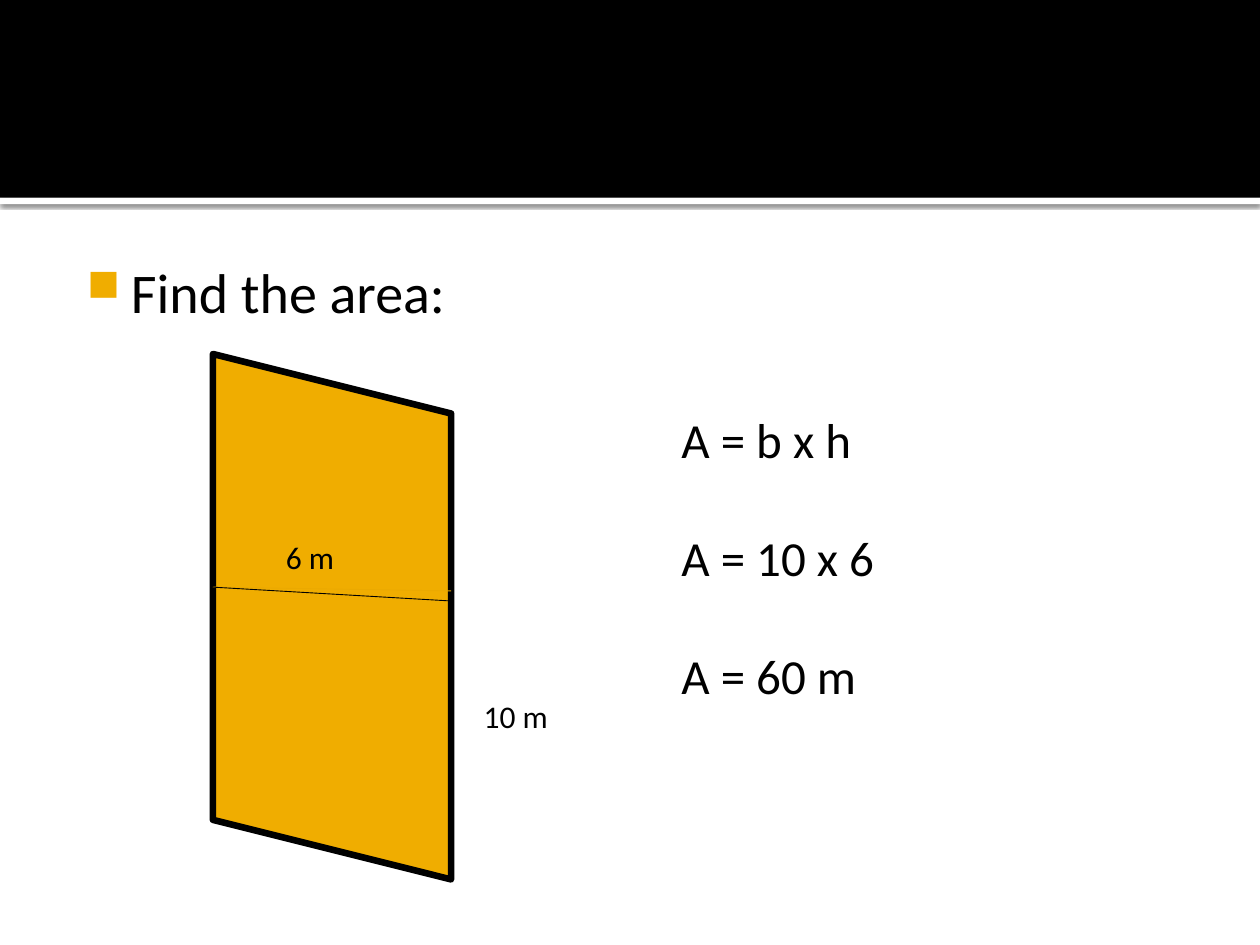
"""Build a slide that works out the area of a parallelogram."""
import lxml.etree
import pptx
import pptx.dml.color
import pptx.enum.shapes
import pptx.oxml.ns
import pptx.util
from dataclasses import dataclass

Inches = pptx.util.Inches
Pt = pptx.util.Pt
SHAPES = pptx.enum.shapes.MSO_SHAPE


@dataclass(frozen=True)
class Theme:
    font: str = "Calibri"
    ink: str = "000000"
    paper: str = "FFFFFF"
    gold: str = "F0AD00"
    dark_gold: str = "EBA900"
    heading: int = 32
    working: int = 28
    label: int = 18
    outline: float = 3.78
    hairline: float = 0.5


THEME = Theme()
SIZE = (10, 7.5)
BANDS = [((0, 1.57, 10, 0.05), THEME.paper), ((0, 0, 10, 1.57), THEME.ink)]
PARALLELOGRAM = (0.55, 3.95, 4.17, 1.89)
HEIGHT_START = (1.69, 4.66)
HEIGHT_ENDS = [((3.58, 4.69), THEME.dark_gold), ((3.58, 4.77), THEME.ink)]
HEADING = ("Find the area:", (0.5, 1.94, 9, 5.06))
LABELS = [("6 m", (2.17, 4.22, 1.1, 0.4)), ("10 m", (3.74, 5.48, 1.02, 0.4))]
WORKING = ("A = b x h\nA = 10 x 6\nA = 60 m", (5.31, 3.2, 3.62, 3.4))


def rgb(value):
    return pptx.dml.color.RGBColor.from_string(value)


def add_node(parent, tag, **attributes):
    node = lxml.etree.SubElement(parent, pptx.oxml.ns.qn(tag))
    for name, value in attributes.items():
        node.set(name, str(value))
    return node


def add_filled(page, kind, place, fill, outline=None):
    shape = page.shapes.add_shape(kind, *map(Inches, place))
    shape.shadow.inherit = False
    shape.fill.solid()
    shape.fill.fore_color.rgb = rgb(fill)
    if outline:
        shape.line.color.rgb = rgb(outline)
        shape.line.width = Pt(THEME.outline)
    else:
        shape.line.fill.background()
    return shape


def add_soft_shadow(shape):
    effects = shape._element.spPr.find(pptx.oxml.ns.qn("a:effectLst"))
    shadow = add_node(effects, "a:outerShdw", blurRad=Pt(2.5), dist=Pt(0.8),
                      dir=90 * 60000, algn="tl", rotWithShape=0)
    color = add_node(shadow, "a:srgbClr", val=THEME.ink)
    add_node(color, "a:alpha", val=60000)


def add_line(page, start, end, color):
    line = page.shapes.add_connector(pptx.enum.shapes.MSO_CONNECTOR.STRAIGHT,
                                     *map(Inches, start + end))
    line.line.color.rgb = rgb(color)
    line.line.width = Pt(THEME.hairline)
    add_node(line._element.spPr, "a:effectLst")


def add_text(page, text, place, size, gap=0, bullet=False, left=0.1, top=0.05):
    box = page.shapes.add_textbox(*map(Inches, place))
    frame = box.text_frame
    frame.word_wrap = True
    frame.margin_left, frame.margin_top = Inches(left), Inches(top)
    for index, words in enumerate(text.split("\n")):
        para = frame.add_paragraph() if index else frame.paragraphs[0]
        para.space_before = Pt(gap if index else 0)
        span = para.add_run()
        span.text = words
        span.font.name = THEME.font
        span.font.size = Pt(size)
        span.font.color.rgb = rgb(THEME.ink)
        if bullet:
            style = para._p.get_or_add_pPr()
            style.set("marL", str(Inches(0.48)))
            style.set("indent", str(Inches(-0.35)))
            add_node(add_node(style, "a:buClr"), "a:srgbClr", val=THEME.gold)
            add_node(style, "a:buSzPct", val=80000)
            add_node(style, "a:buChar", char="■")


def main():
    deck = pptx.Presentation()
    deck.slide_width, deck.slide_height = map(Inches, SIZE)
    page = deck.slides.add_slide(deck.slide_layouts[6])
    page.background.fill.solid()
    page.background.fill.fore_color.rgb = rgb(THEME.paper)

    stripe, banner = [add_filled(page, SHAPES.RECTANGLE, place, fill)
                      for place, fill in BANDS]
    add_soft_shadow(stripe)
    add_text(page, *HEADING, THEME.heading, bullet=True, left=0.06, top=0.1)

    figure = add_filled(page, SHAPES.PARALLELOGRAM, PARALLELOGRAM,
                        THEME.gold, outline=THEME.ink)
    figure.rotation = 90
    for end, color in HEIGHT_ENDS:
        add_line(page, HEIGHT_START, end, color)
    for text, place in LABELS:
        add_text(page, text, place, THEME.label)
    add_text(page, *WORKING, THEME.working, gap=34)
    deck.save("out.pptx")


if __name__ == "__main__":
    main()
